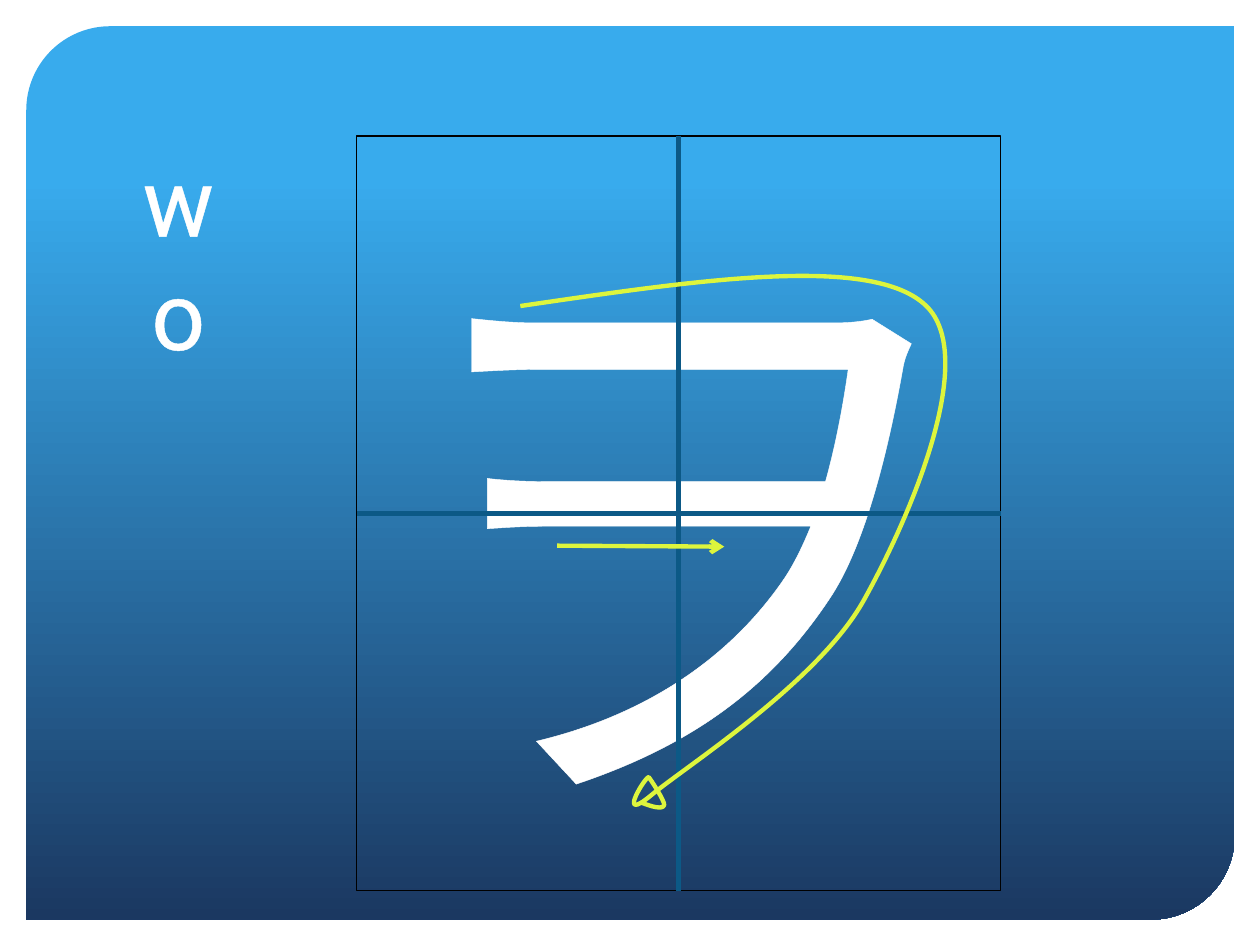
from lxml import etree
from pptx import Presentation
from pptx.dml.color import RGBColor
from pptx.enum import shapes, text
from pptx.oxml import parse_xml
from pptx.oxml.ns import nsdecls, qn
from pptx.util import Cm, Pt

WHITE = RGBColor(0xFF, 0xFF, 0xFF)
BLACK = RGBColor(0, 0, 0)
SKY = RGBColor(0x38, 0xAB, 0xED)
NAVY = RGBColor(0x1B, 0x38, 0x61)
TEAL = RGBColor(0x0C, 0x59, 0x86)
LIME = RGBColor(0xDD, 0xF5, 0x3D)
FONT = "Roboto"


def write(shape, words, size):
    """Centred white text with a thin white outline."""
    para = shape.text_frame.paragraphs[0]
    para.text = words
    para.alignment = text.PP_ALIGN.CENTER
    font = para.runs[0].font
    font.name, font.size = FONT, Pt(size)
    font.color.rgb = WHITE
    props = para.runs[0]._r.get_or_add_rPr()
    props.insert(0, parse_xml(
        f'<a:ln {nsdecls("a")} w="{Pt(1.45)}"><a:solidFill>'
        f'<a:srgbClr val="{WHITE}"/></a:solidFill></a:ln>'))
    props.find(qn("a:latin")).addnext(
        parse_xml(f'<a:ea {nsdecls("a")} typeface="{FONT}"/>'))


def rule(x1, y1, x2, y2, color):
    line = slide.shapes.add_connector(
        shapes.MSO_CONNECTOR.STRAIGHT, Cm(x1), Cm(y1), Cm(x2), Cm(y2))
    line.line.color.rgb = color
    line.line.width = Pt(2.5)
    etree.SubElement(line._element.spPr, qn("a:effectLst"))
    return line


deck = Presentation()
deck.slide_width, deck.slide_height = Cm(25.4), Cm(19.05)
slide = deck.slides.add_slide(deck.slide_layouts[6])

# Background panel
panel = slide.shapes.add_shape(
    shapes.MSO_SHAPE.ROUND_2_DIAG_RECTANGLE,
    Cm(0.53), Cm(0.53), Cm(24.36), Cm(18.01))
panel.adjustments[0], panel.adjustments[1] = 0.094, 0
panel.shadow.inherit = False
panel.line.fill.background()
panel.fill.gradient()
panel.fill.gradient_angle = 270
for stop, place, color in zip(panel.fill.gradient_stops, (0.17, 1), (SKY, NAVY)):
    stop.position = place
    stop.color.rgb = color

# Character in its practice frame
left, top, width, height = 7.19, 2.74, 12.98, 15.22
frame = slide.shapes.add_shape(
    shapes.MSO_SHAPE.RECTANGLE, Cm(left), Cm(top), Cm(width), Cm(height))
frame.shadow.inherit = False
frame.fill.background()
frame.line.color.rgb = BLACK
frame.line.width = Pt(0.75)
frame.text_frame.word_wrap = False
write(frame, "ヲ", 350)

# Guide lines through the middle
midx, midy = left + width / 2, top + height / 2
for ends, first, last in (
        ((left, midy, left + width, midy), 1, 3),
        ((midx, top, midx, top + height), 0, 2)):
    guide = rule(*ends, TEAL)
    guide.begin_connect(frame, first)
    guide.end_connect(frame, last)

# Reading, one letter to a line
sound = slide.shapes.add_textbox(Cm(2.11), Cm(top), Cm(2.97), Cm(2.57))
sound.text_frame.word_wrap = True
sound.text_frame.margin_left = sound.text_frame.margin_right = Cm(0.5)
write(sound, "wo", 54)

# First stroke: a start point, then three points for each curve
start = (10.49, 6.17)
curves = [
    (13.97, 5.66), (17.48, 5.13), (18.62, 6.12),
    (19.79, 7.11), (18.34, 10.44), (17.42, 12.09),
    (16.51, 13.74), (13.84, 15.44), (13.13, 16.03),
    (12.4, 16.64), (13.03, 15.62), (13.08, 15.67),
    (13.11, 15.7), (13.41, 16.16), (13.39, 16.23),
    (13.36, 16.33), (13.13, 16.26), (12.93, 16.18),
]
pen = slide.shapes.build_freeform(Cm(start[0]), Cm(start[1]))
pen.add_line_segments([(Cm(x), Cm(y)) for x, y in curves], close=False)
stroke = pen.convert_to_shape()
stroke.shadow.inherit = False
stroke.fill.background()
stroke.line.color.rgb = LIME
stroke.line.width = Pt(2.5)
route = stroke._element.find(".//" + qn("a:path"))
steps = route.findall(qn("a:lnTo"))
for i in range(0, len(steps), 3):
    curve = etree.SubElement(route, qn("a:cubicBezTo"))
    for step in steps[i:i + 3]:
        curve.append(step[0])
        route.remove(step)

# Second stroke
arrow = rule(11.23, 11, 14.6, 11.02, LIME)
etree.SubElement(arrow.line._get_or_add_ln(), qn("a:tailEnd"), type="arrow")

deck.save("out.pptx")
